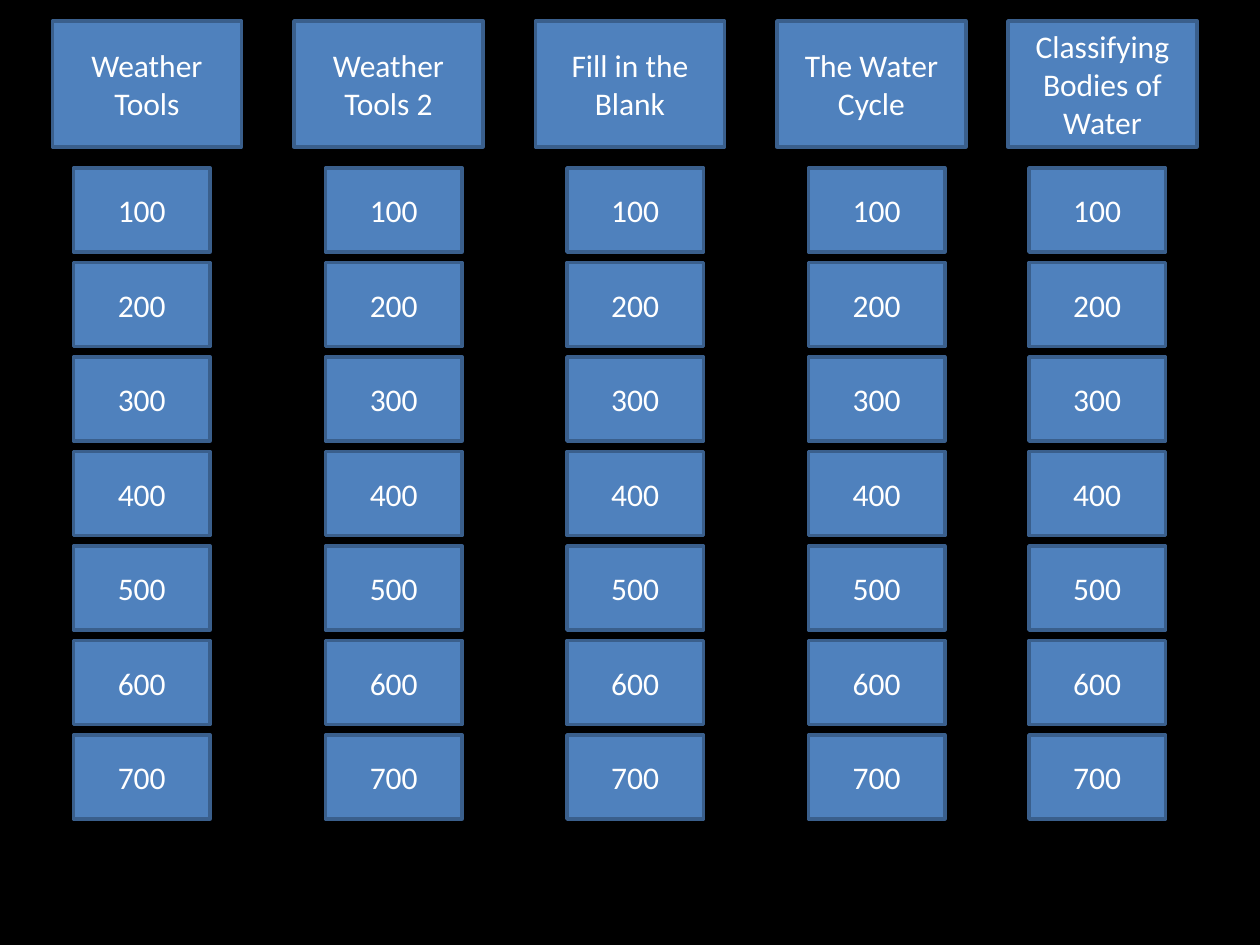
import pptx
import pptx.util
import pptx.dml.color
import pptx.enum.shapes
import pptx.enum.text

Pt = pptx.util.Pt


def color(hex_text):
    return pptx.dml.color.RGBColor.from_string(hex_text)


class Board:
    """Holds the style and the current slide."""

    font_name = "Calibri"
    font_size = 18
    text_color = "FFFFFF"
    fill_color = "4F81BD"
    line_color = "3A5F8C"
    line_width = 2

    def __init__(self, slide, background):
        self.slide = slide
        slide.background.fill.solid()
        slide.background.fill.fore_color.rgb = color(background)

    def box(self, text, left, top, width, height):
        shape = self.slide.shapes.add_shape(
            pptx.enum.shapes.MSO_SHAPE.RECTANGLE,
            Pt(left), Pt(top), Pt(width), Pt(height))
        shape.shadow.inherit = False
        shape.fill.solid()
        shape.fill.fore_color.rgb = color(self.fill_color)
        shape.line.color.rgb = color(self.line_color)
        shape.line.width = Pt(self.line_width)

        frame = shape.text_frame
        frame.word_wrap = True
        frame.vertical_anchor = pptx.enum.text.MSO_ANCHOR.MIDDLE
        frame.text = text
        paragraph = frame.paragraphs[0]
        paragraph.alignment = pptx.enum.text.PP_ALIGN.CENTER
        paragraph.font.name = self.font_name
        paragraph.font.size = Pt(self.font_size)
        paragraph.font.color.rgb = color(self.text_color)

    def category(self, text, left):
        self.box(text, left, 12, 108, 72)

    def value(self, row, left):
        self.box(str(100 * (row + 1)), left, 96 + 54 * row, 78, 48)


def main():
    presentation = pptx.Presentation()
    presentation.slide_width = Pt(720)
    presentation.slide_height = Pt(540)
    slide = presentation.slides.add_slide(presentation.slide_layouts[6])
    board = Board(slide, "000000")

    # Category name, left of its heading, left of its value tiles
    columns = [
        ("Weather Tools", 30, 42),
        ("Weather Tools 2", 168, 186),
        ("Fill in the Blank", 306, 324),
        ("The Water Cycle", 444, 462),
        ("Classifying Bodies of Water", 576, 588),
    ]
    for name, heading_left, tile_left in columns:
        # Heading
        board.category(name, heading_left)
        # Values 100 to 700
        for row in range(7):
            board.value(row, tile_left)

    presentation.save("out.pptx")


if __name__ == "__main__":
    main()
